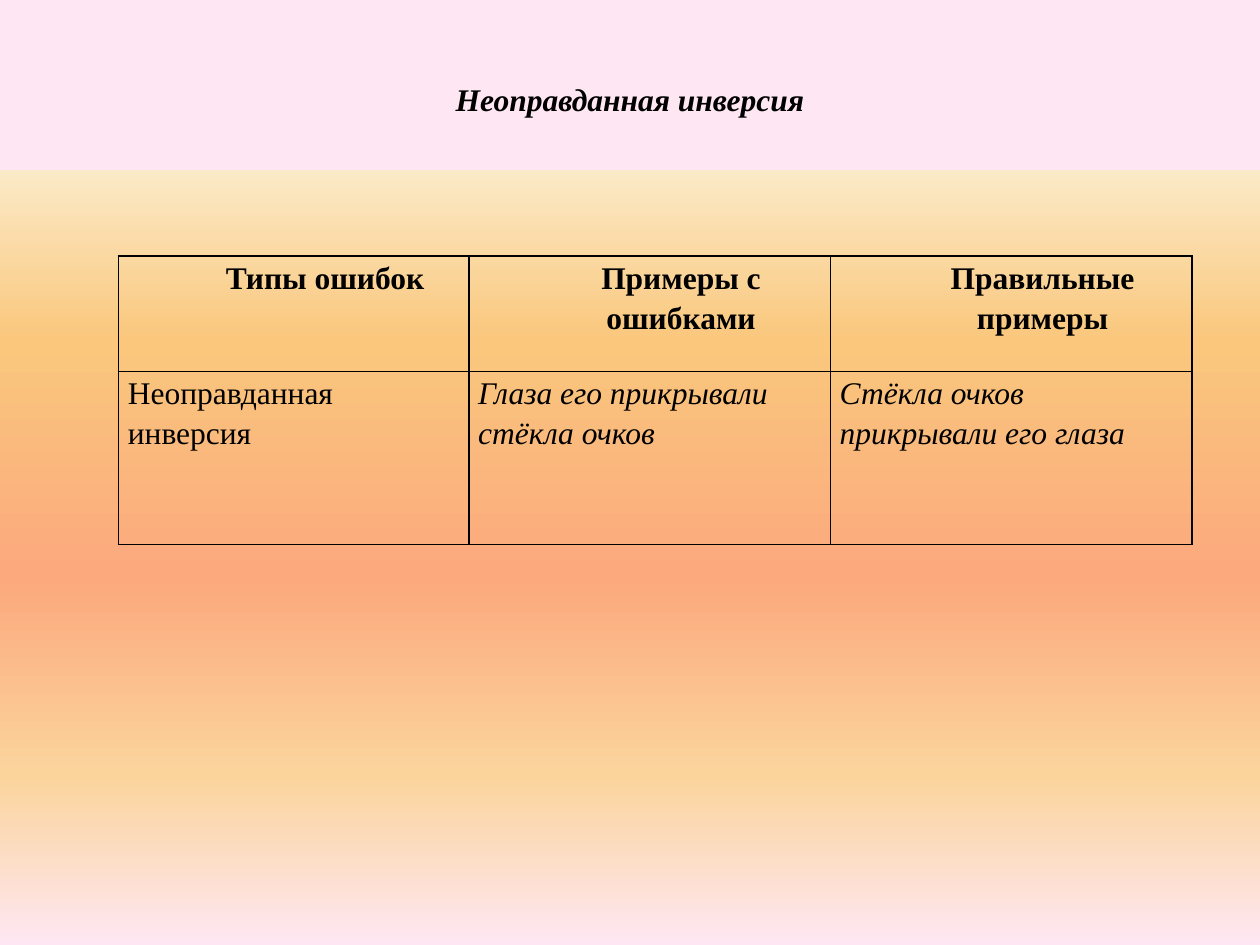
from lxml.etree import SubElement
from pptx import Presentation
from pptx.dml.color import RGBColor
from pptx.enum.text import MSO_ANCHOR, PP_ALIGN
from pptx.oxml.ns import qn
from pptx.util import Pt

COLORS = {"text": "000000", "pink": "FEE7F2", "cream": "FBEAC7",
          "gold": "FAC77D", "coral": "FBA97D", "sand": "FBD49C"}
GRADIENT = [(0, "pink"), (18, "pink"), (18, "cream"), (36, "gold"),
            (61, "coral"), (82, "sand"), (100, "pink")]
FONT = "Times New Roman"
HEADERS = ["Типы ошибок", "Примеры с ошибками", "Правильные примеры"]
EXAMPLES = ["Неоправданная инверсия", "Глаза его прикрывали стёкла очков",
            "Стёкла очков прикрывали его глаза"]
COL_WIDTHS = [200.2, 206.6, 206.6]
ROW_HEIGHTS = [66, 99]


def set_background(s):
    fill = s.background.fill
    fill.gradient()
    fill.gradient_angle = 270
    stops = next(s._element.iter(qn("a:gsLst")))
    for stop in list(stops):
        stops.remove(stop)
    for pos, name in GRADIENT:
        stop = SubElement(stops, qn("a:gs"), pos=str(pos * 1000))
        SubElement(stop, qn("a:srgbClr"), val=COLORS[name])


def add_run(p, text, bold=False, italic=False):
    r = p.add_run()
    r.text = text
    r.font.name = FONT
    r.font.size = Pt(18)
    r.font.bold = bold
    r.font.italic = italic
    r.font.color.rgb = RGBColor.from_string(COLORS["text"])


def add_title(s, text):
    title = s.shapes.title
    title.left, title.top = Pt(36), Pt(21.6)
    title.width, title.height = Pt(648), Pt(90)
    tf = title.text_frame
    tf.word_wrap = True
    tf.vertical_anchor = MSO_ANCHOR.MIDDLE
    tf.margin_bottom = Pt(24)
    p = tf.paragraphs[0]
    p.alignment = PP_ALIGN.CENTER
    add_run(p, text, bold=True, italic=True)


def set_borders(cell):
    tcPr = cell._tc.get_or_add_tcPr()
    for side in ("lnL", "lnR", "lnT", "lnB"):
        line = SubElement(tcPr, qn(f"a:{side}"), w=str(Pt(1)))
        fill = SubElement(line, qn("a:solidFill"))
        SubElement(fill, qn("a:srgbClr"), val=COLORS["text"])


def fill_cell(cell, text, header, italic):
    set_borders(cell)
    cell.fill.background()
    cell.margin_left = cell.margin_right = Pt(5.4)
    cell.margin_top = cell.margin_bottom = 0
    p = cell.text_frame.paragraphs[0]
    p.line_spacing = 1.15
    if header:
        p.alignment = PP_ALIGN.CENTER
        pPr = p._p.get_or_add_pPr()
        pPr.set("marL", str(Pt(36)))
        pPr.set("indent", "0")
    add_run(p, text, bold=header, italic=italic)


def add_error_table(s):
    rows = [HEADERS, EXAMPLES]
    table = s.shapes.add_table(len(rows), len(HEADERS), Pt(67.7), Pt(146.2),
                               Pt(sum(COL_WIDTHS)), Pt(sum(ROW_HEIGHTS))).table
    table.first_row = table.horz_banding = False
    for col, width in zip(table.columns, COL_WIDTHS):
        col.width = Pt(width)
    for i, (height, texts) in enumerate(zip(ROW_HEIGHTS, rows)):
        table.rows[i].height = Pt(height)
        for j, text in enumerate(texts):
            fill_cell(table.cell(i, j), text, header=i == 0, italic=i > 0 and j > 0)


def main():
    prs = Presentation()
    prs.slide_width, prs.slide_height = Pt(720), Pt(540)
    s = prs.slides.add_slide(prs.slide_layouts[5])
    set_background(s)
    add_title(s, "Неоправданная инверсия")
    add_error_table(s)
    prs.save("out.pptx")


if __name__ == "__main__":
    main()
